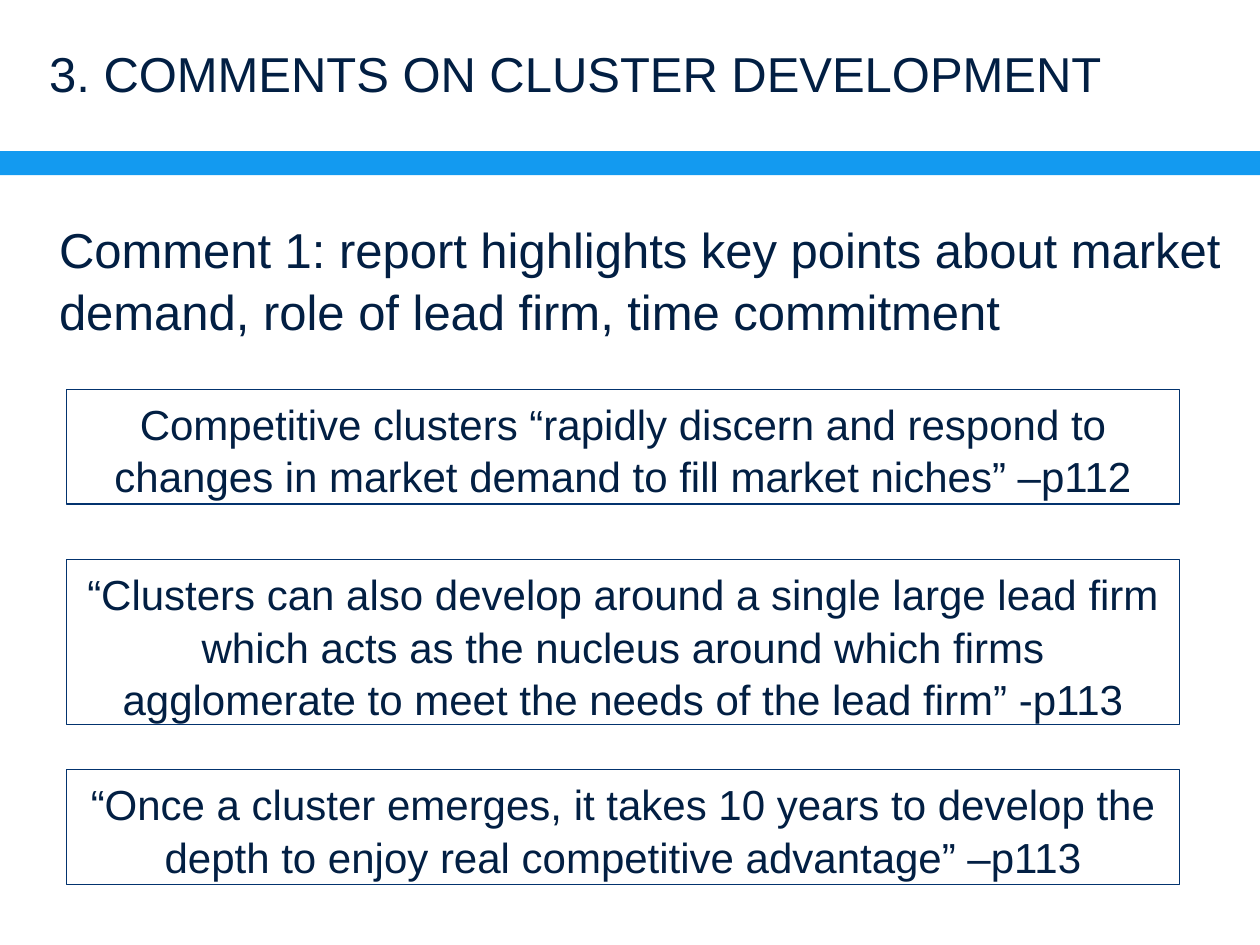
from pptx import Presentation
from pptx.dml.color import RGBColor
from pptx.enum.shapes import MSO_SHAPE
from pptx.enum.text import MSO_ANCHOR, PP_ALIGN
from pptx.util import Inches, Pt

RECTANGLE = MSO_SHAPE.RECTANGLE
TOP, MIDDLE = MSO_ANCHOR.TOP, MSO_ANCHOR.MIDDLE
LEFT, CENTER = PP_ALIGN.LEFT, PP_ALIGN.CENTER

NAVY = RGBColor(0x02, 0x1F, 0x43)
BORDER_BLUE = RGBColor(0x03, 0x33, 0x6E)
BAND_BLUE = RGBColor(0x13, 0x9A, 0xF0)

FONT = "Arial"
QUOTE_LEFT, QUOTE_WIDTH = 0.53, 8.83
QUOTES = [
    (3.09, 0.91, "Competitive clusters “rapidly discern and respond to changes in "
                 "market demand to fill market niches” –p112"),
    (4.44, 1.31, "“Clusters can also develop around a single large lead firm which acts "
                 "as the nucleus around which firms agglomerate to meet the needs of the "
                 "lead firm” -p113"),
    (6.11, 0.91, "“Once a cluster emerges, it takes 10 years to develop the depth to "
                 "enjoy real competitive advantage” –p113"),
]


def write_text(shape, text, size=24, align=LEFT, anchor=TOP, inset=None,
               line_spacing=1.05, space_after=0):
    frame = shape.text_frame
    frame.word_wrap = True
    frame.vertical_anchor = anchor
    if inset is not None:
        frame.margin_left = frame.margin_right = Inches(inset)
        frame.margin_top = frame.margin_bottom = Inches(inset)
    paragraph = frame.paragraphs[0]
    paragraph.alignment = align
    paragraph.line_spacing = line_spacing
    paragraph.space_after = Pt(space_after)
    run = paragraph.add_run()
    run.text = text
    run.font.name = FONT
    run.font.size = Pt(size)
    run.font.color.rgb = NAVY


def add_rectangle(slide, box):
    rectangle = slide.shapes.add_shape(RECTANGLE, *map(Inches, box))
    rectangle.shadow.inherit = False
    return rectangle


def add_band(slide, box):
    band = add_rectangle(slide, box)
    band.fill.solid()
    band.fill.fore_color.rgb = BAND_BLUE
    band.line.fill.background()


def add_heading(slide, box, text, **text_format):
    heading = slide.shapes.add_textbox(*map(Inches, box))
    write_text(heading, text, size=28, **text_format)


def add_quote(slide, box, text):
    quote = add_rectangle(slide, box)
    quote.fill.background()
    quote.line.color.rgb = BORDER_BLUE
    quote.line.width = Pt(0.75)
    write_text(quote, text, align=CENTER)


def main():
    prs = Presentation()
    prs.slide_width, prs.slide_height = Inches(10), Inches(7.5)
    slide = prs.slides.add_slide(prs.slide_layouts[6])

    add_band(slide, (0, 1.2, 10, 0.19))
    add_heading(slide, (0.39, 0, 9.25, 1.16), "3. COMMENTS ON CLUSTER DEVELOPMENT",
                anchor=MIDDLE, inset=0, line_spacing=1.0)
    add_heading(slide, (0.37, 1.67, 9.61, 1.58),
                "Comment 1: report highlights key points about market demand, "
                "role of lead firm, time commitment", space_after=24)
    for top, height, text in QUOTES:
        add_quote(slide, (QUOTE_LEFT, top, QUOTE_WIDTH, height), text)

    prs.save("out.pptx")


if __name__ == "__main__":
    main()
